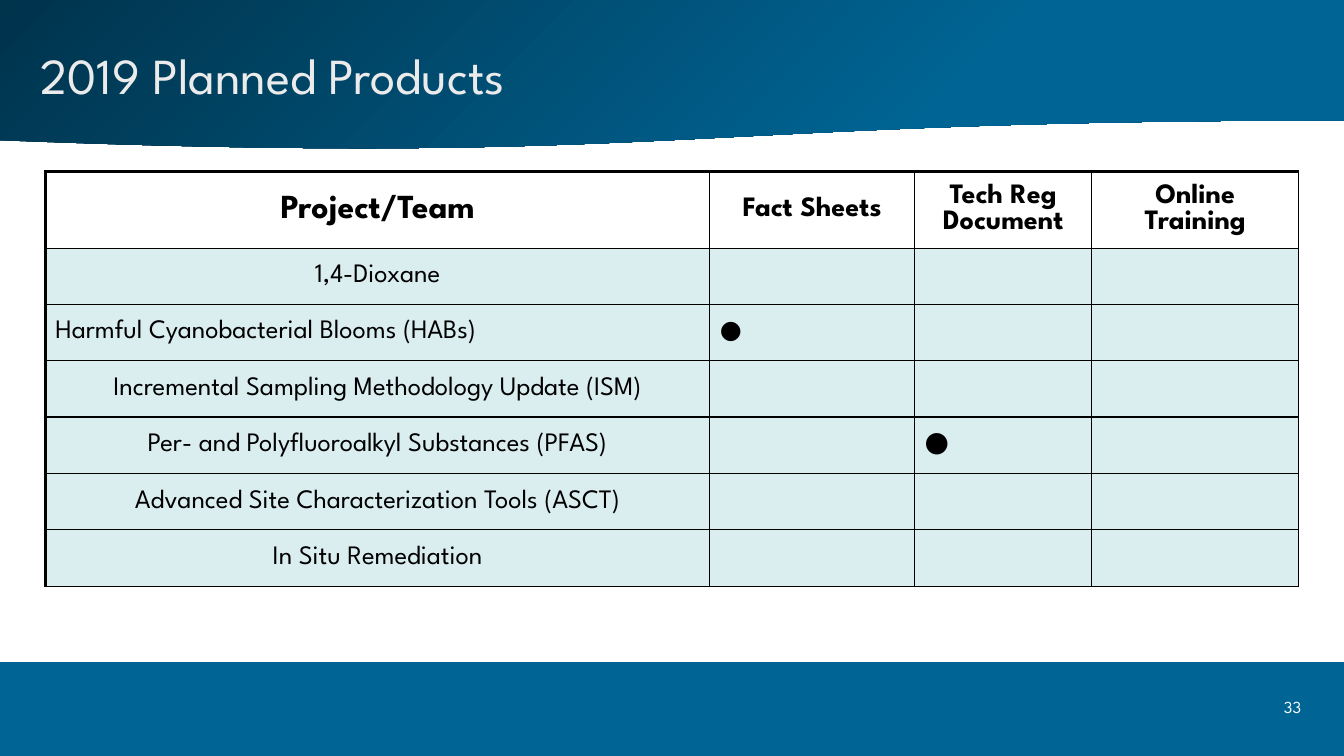
import pptx
import pptx.dml.color
import pptx.enum.shapes
import pptx.enum.text
import pptx.oxml
import pptx.oxml.ns
import pptx.util

Inches, Pt = pptx.util.Inches, pptx.util.Pt
RGB = pptx.dml.color.RGBColor.from_string
ALIGN = pptx.enum.text.PP_ALIGN
ANCHOR = pptx.enum.text.MSO_ANCHOR
SHAPE = pptx.enum.shapes.MSO_SHAPE

THEME = {
    "font": "League Spartan",
    "navy": "00334C", "blue": "006595", "title": "EBEBEB",
    "white": "FFFFFF", "black": "000000", "tint": "DAEDEF",
    "title_size": 36, "first_head": 24, "head": 20,
    "body": 19, "number": 12, "rule": 1, "edge": 2.25,
}


def write(frame, text, size, color, align, bold=False):
    frame.text = text
    paragraph = frame.paragraphs[0]
    paragraph.alignment = align
    for run in paragraph.runs:
        run.font.name = THEME["font"]
        run.font.size = Pt(size)
        run.font.bold = bold
        run.font.color.rgb = RGB(THEME[color])


def draw_border(cell, side, width):
    cell._tc.get_or_add_tcPr().append(pptx.oxml.parse_xml(
        f'<a:ln{side} {pptx.oxml.ns.nsdecls("a")} w="{Pt(width)}">'
        f'<a:solidFill><a:srgbClr val="{THEME["black"]}"/></a:solidFill>'
        f'</a:ln{side}>'))


deck = pptx.Presentation()
deck.slide_width, deck.slide_height = Inches(13.33), Inches(7.5)
W, H = deck.slide_width, deck.slide_height
slide = deck.slides.add_slide(deck.slide_layouts[5])

header_height, footer_height = Inches(1.49), Inches(0.93)
header = slide.shapes.add_shape(SHAPE.FLOWCHART_DOCUMENT, 0, 0, W, header_height)
footer = slide.shapes.add_shape(SHAPE.RECTANGLE, 0, H - footer_height, W, footer_height)
for band in (header, footer):
    band.shadow.inherit = False
    band.line.fill.background()
footer.fill.solid()
footer.fill.fore_color.rgb = RGB(THEME["blue"])
header.fill.gradient()
header.fill.gradient_angle = 315
for stop, color, position in zip(header.fill.gradient_stops, ("navy", "blue"), (0, 0.71)):
    stop.color.rgb = RGB(THEME[color])
    stop.position = position

heading = slide.shapes.title
footer.element.addnext(heading.element)
heading.left, heading.top = Inches(0.3), Inches(0.35)
heading.width, heading.height = Inches(9.58), Inches(0.77)
heading.text_frame.auto_size = pptx.enum.text.MSO_AUTO_SIZE.NONE
heading.text_frame.vertical_anchor = ANCHOR.MIDDLE
write(heading.text_frame, "2019 Planned Products", THEME["title_size"], "title", ALIGN.LEFT)

page_number = slide.shapes.add_textbox(Inches(12.56), Inches(6.86), Inches(0.52), Inches(0.44))
page_number.text_frame.word_wrap = True
page_number.text_frame.vertical_anchor = ANCHOR.TOP
write(page_number.text_frame, "33", THEME["number"], "white", ALIGN.CENTER)

headings = ["Project/Team", "Fact Sheets", "Tech Reg Document", "Online Training"]
projects = [
    "1,4-Dioxane",
    "Harmful Cyanobacterial Blooms (HABs)",
    "Incremental Sampling Methodology Update (ISM)",
    "Per- and Polyfluoroalkyl Substances (PFAS)",
    "Advanced Site Characterization Tools (ASCT)",
    "In Situ Remediation",
]
left_aligned = projects[1]
planned = {(2, 1): 18, (4, 2): 20}
column_widths = [6.59, 2.03, 1.76, 2.05]
row_heights = [0.63, 0.55] + [0.56] * (len(projects) - 1)

products = slide.shapes.add_table(
    len(row_heights), len(column_widths), Inches(0.45), Inches(1.7),
    Inches(sum(column_widths)), Inches(sum(row_heights))).table
products.first_row = products.horz_banding = False
for column, width in zip(products.columns, column_widths):
    column.width = Inches(width)
for row, height in zip(products.rows, row_heights):
    row.height = Inches(height)

for r in range(len(row_heights)):
    for c in range(len(column_widths)):
        cell = products.cell(r, c)
        cell.vertical_anchor = ANCHOR.MIDDLE
        draw_border(cell, "L", THEME["rule"] if c else THEME["edge"])
        draw_border(cell, "R", THEME["rule"])
        draw_border(cell, "T", THEME["rule"] if r else THEME["edge"])
        draw_border(cell, "B", THEME["rule"])
        cell.fill.solid()
        cell.fill.fore_color.rgb = RGB(THEME["tint" if r else "white"])
        if r == 0:
            size = THEME["head"] if c else THEME["first_head"]
            write(cell.text_frame, headings[c], size, "black", ALIGN.CENTER, True)
        elif c == 0:
            project = projects[r - 1]
            align = ALIGN.LEFT if project == left_aligned else ALIGN.CENTER
            write(cell.text_frame, project, THEME["body"], "black", align)
        elif (r, c) in planned:
            write(cell.text_frame, "●", planned[r, c], "black", ALIGN.LEFT)

deck.save("out.pptx")
